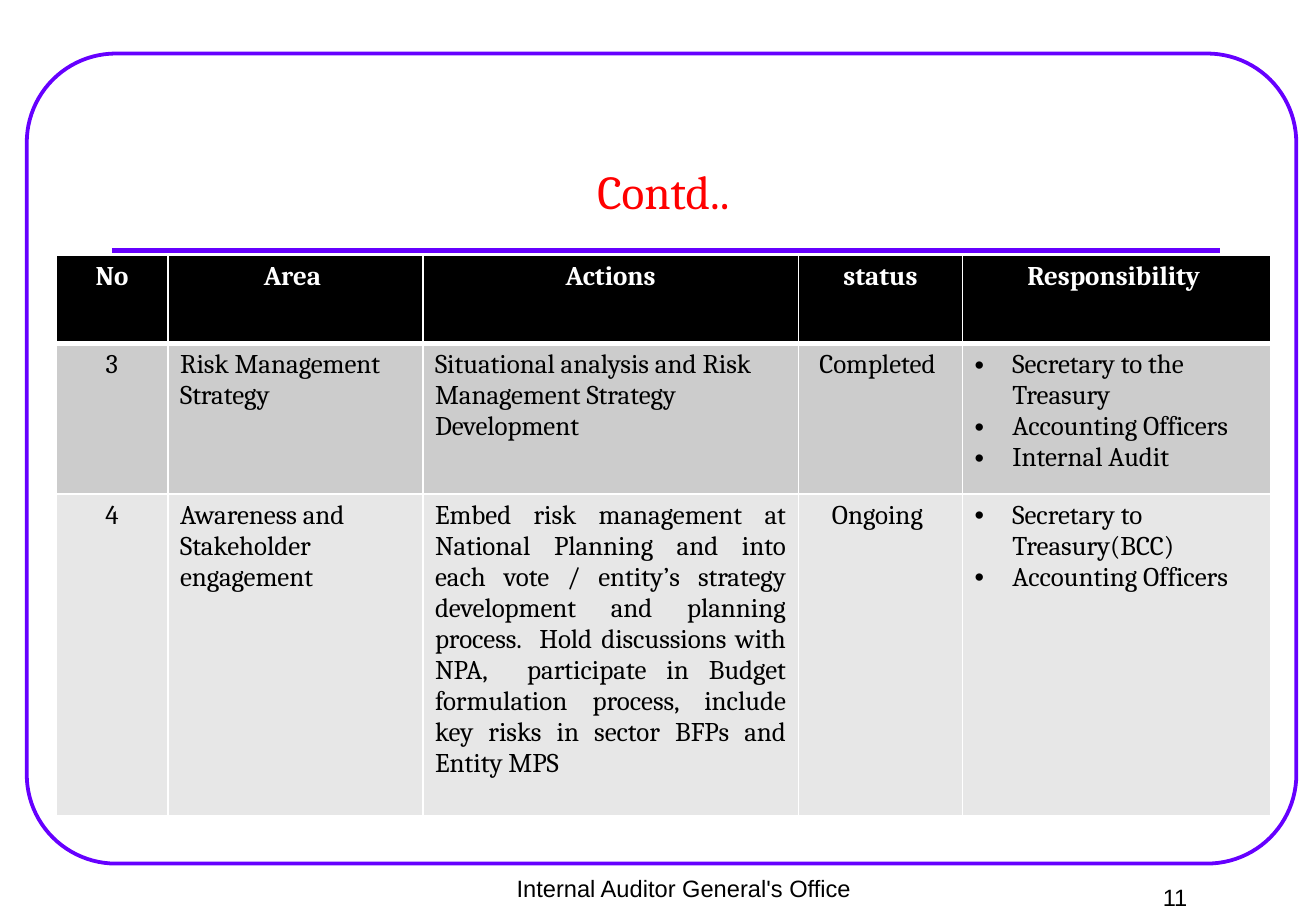
"""Build the slide with the continued table of risk management actions."""
import pptx
import pptx.util
import pptx.dml.color
import pptx.enum.shapes
import pptx.enum.text
import pptx.oxml
import pptx.oxml.ns

Cm = pptx.util.Cm
Pt = pptx.util.Pt
Anchor = pptx.enum.text.MSO_ANCHOR
Align = pptx.enum.text.PP_ALIGN
qn = pptx.oxml.ns.qn
NS = pptx.oxml.ns.nsdecls("a")

COLORS = {"frame": "6600FF", "title": "FF0000", "text": "000000", "head": "000000",
          "white": "FFFFFF", "odd": "CCCCCC", "even": "E7E7E7"}


def color(name):
    return pptx.dml.color.RGBColor.from_string(COLORS[name])


def write(para, text, size, font, tint, bold=False, align=Align.CENTER):
    para.alignment = align
    run = para.add_run()
    run.text = text
    run.font.size = Pt(size)
    run.font.name = font
    run.font.bold = bold
    run.font.color.rgb = color(tint)


deck = pptx.Presentation()
deck.slide_width = Cm(27.51)
deck.slide_height = Cm(19.05)
slide = deck.slides.add_slide(deck.slide_layouts[6])
shapes = slide.shapes

frame = shapes.add_shape(pptx.enum.shapes.MSO_SHAPE.ROUNDED_RECTANGLE,
                         Cm(0.56), Cm(1.12), Cm(26.54), Cm(16.94))
frame.adjustments[0] = 0.11
frame.shadow.inherit = False
frame.fill.background()
frame.line.color.rgb = color("frame")
frame.line.width = Pt(2.25)

rule = shapes.add_connector(pptx.enum.shapes.MSO_CONNECTOR.STRAIGHT,
                            Cm(2.34), Cm(5.23), Cm(25.5), Cm(5.23))
rule.line.color.rgb = color("frame")
rule.line.width = Pt(3)
rule._element.spPr.append(pptx.oxml.parse_xml(f"<a:effectLst {NS}/>"))

labels = [
    ("Contd..", 2.29, 1.52, 23.16, 3.18, 28, "Cambria", "title", Anchor.BOTTOM),
    ("Internal Auditor General's Office ", 9.17, 18.14, 10.39, 0.91, 14, "Arial", "text", Anchor.TOP),
    ("11", 22.15, 18.34, 4.83, 0.71, 14, "Arial", "text", Anchor.TOP),
]
for text, left, top, width, height, size, font, tint, anchor in labels:
    box = shapes.add_textbox(Cm(left), Cm(top), Cm(width), Cm(height)).text_frame
    box.word_wrap = True
    box.vertical_anchor = anchor
    write(box.paragraphs[0], text, size, font, tint)

rows = [
    ["No", "Area ", " Actions ", " status ", "Responsibility "],
    ["3", "Risk Management Strategy",
     "Situational analysis and Risk Management Strategy Development", "Completed ",
     ["Secretary to the Treasury", "Accounting Officers", "Internal Audit"]],
    ["4", "Awareness and Stakeholder engagement",
     "Embed risk management at National Planning and into each vote / entity’s "
     "strategy development and planning process.  Hold discussions with NPA,  "
     "participate in Budget formulation process, include key risks in sector "
     "BFPs and Entity MPS", "Ongoing ",
     ["Secretary to Treasury(BCC)", "Accounting Officers"]],
]
widths = [2.34, 5.33, 7.85, 3.43, 6.45]
heights = [1.85, 3.15, 6.73]
fills = ["head", "odd", "even"]
aligns = [Align.CENTER, Align.LEFT, Align.LEFT, Align.CENTER, Align.LEFT]

table = shapes.add_table(len(rows), len(widths), Cm(1.17), Cm(5.33),
                         Cm(sum(widths)), Cm(sum(heights))).table
for col, width in zip(table.columns, widths):
    col.width = Cm(width)
for row, height in zip(table.rows, heights):
    row.height = Cm(height)

for r, items in enumerate(rows):
    head = r == 0
    for c, item in enumerate(items):
        cell = table.cell(r, c)
        cell.fill.solid()
        cell.fill.fore_color.rgb = color(fills[r])
        props = cell._tc.get_or_add_tcPr()
        for spot, side in enumerate("LRTB"):
            thick = 3 if (r, side) in [(0, "B"), (1, "T")] else 1
            props.insert(spot, pptx.oxml.parse_xml(
                f'<a:ln{side} {NS} w="{Pt(thick)}"><a:solidFill>'
                f'<a:srgbClr val="{COLORS["white"]}"/></a:solidFill></a:ln{side}>'))
        align = Align.CENTER if head else aligns[c]
        if (r, c) == (2, 2):
            align = Align.JUSTIFY
        listed = isinstance(item, list)
        body = cell.text_frame
        for n, text in enumerate(item if listed else [item]):
            para = body.add_paragraph() if n else body.paragraphs[0]
            if listed:
                form = para._p.get_or_add_pPr()
                form.set("marL", str(Cm(0.79)))
                form.set("indent", str(-Cm(0.79)))
                form.append(pptx.oxml.parse_xml(f'<a:buFont {NS} typeface="Arial"/>'))
                form.append(pptx.oxml.parse_xml(f'<a:buChar {NS} char="•"/>'))
            write(para, text, 16, "Cambria", "white" if head else "text", head, align)

deck.save("out.pptx")
